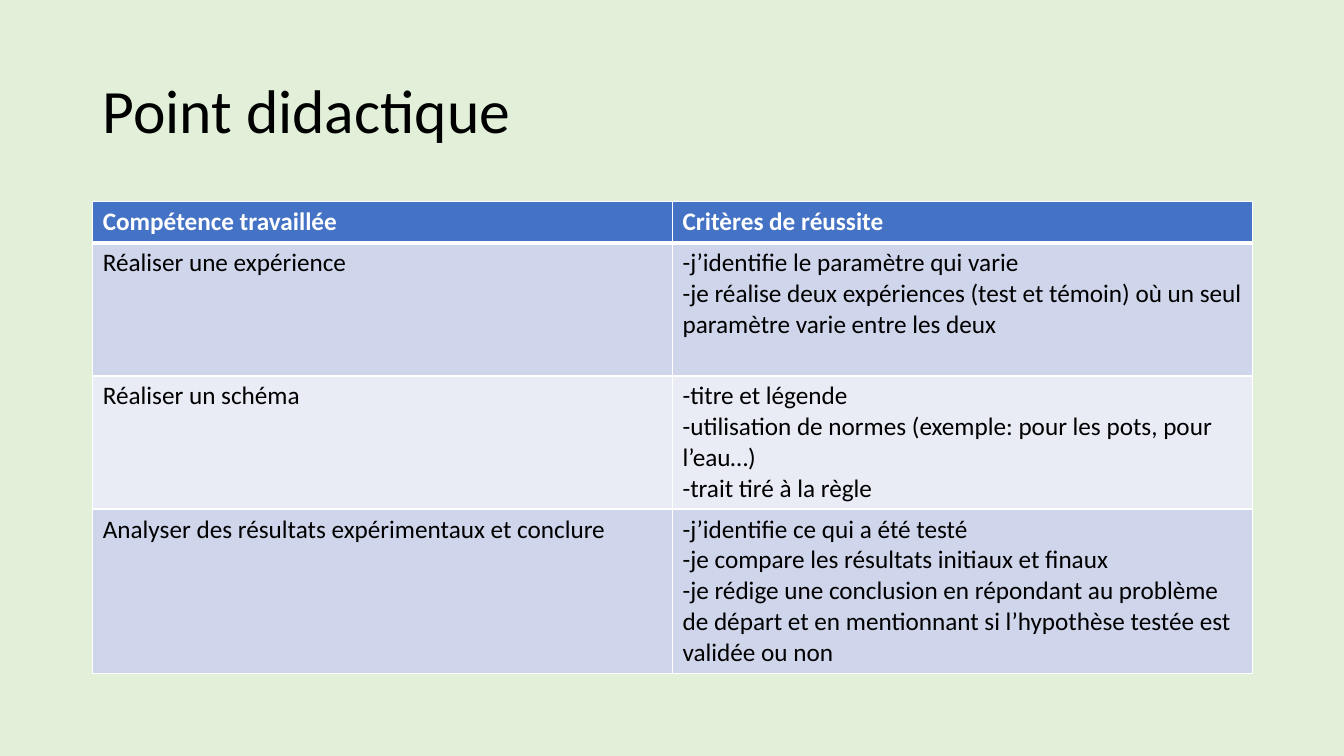
from lxml.etree import SubElement
from pptx import Presentation
from pptx.dml.color import RGBColor
from pptx.enum.text import MSO_ANCHOR
from pptx.oxml.ns import qn
from pptx.util import Inches, Pt

TITLE = "Point didactique"
HEAD = (["Compétence travaillée"], ["Critères de réussite"])
BODY = [
    (["Réaliser une expérience"],
     ["-j’identifie le paramètre qui varie",
      "-je réalise deux expériences (test et témoin) où un seul paramètre "
      "varie entre les deux"]),
    (["Réaliser un schéma"],
     ["-titre et légende",
      "-utilisation de normes (exemple: pour les pots, pour l’eau…)",
      "-trait tiré à la règle"]),
    (["Analyser des résultats expérimentaux et conclure"],
     ["-j’identifie ce qui a été testé",
      "-je compare les résultats initiaux et finaux",
      "-je rédige une conclusion en répondant au problème de départ et en "
      "mentionnant si l’hypothèse testée est validée ou non"]),
]
HEIGHTS = [0.41, 1.32, 1.32, 1.63]
LEFT, WIDTH = 0.92, 11.5
BLACK, WHITE, BLUE = "000000", "FFFFFF", "4472C4"
BANDS = ["CFD5EA", "E9EBF5"]


def color(code):
    return RGBColor.from_string(code)


def paint(fill, code):
    fill.solid()
    fill.fore_color.rgb = color(code)


def write(frame, lines, size, code, bold=False):
    for i, line in enumerate(lines):
        para = frame.add_paragraph() if i else frame.paragraphs[0]
        run = para.add_run()
        run.text = line
        font = run.font
        font.name, font.size, font.bold = "Calibri", Pt(size), bold
        font.color.rgb = color(code)


def border(cell, top, bottom):
    """Draw white cell edges; top and bottom widths are in points."""
    props = cell._tc.get_or_add_tcPr()
    edges = {"L": 1, "R": 1, "T": top, "B": bottom}
    for spot, (side, width) in enumerate(edges.items()):
        line = SubElement(props, qn(f"a:ln{side}"), w=str(Pt(width)))
        fill = SubElement(line, qn("a:solidFill"))
        SubElement(fill, qn("a:srgbClr"), val=WHITE)
        props.insert(spot, line)


def add_title(slide):
    box = slide.shapes.add_textbox(
        Inches(LEFT), Inches(0.4), Inches(WIDTH), Inches(1.45))
    frame = box.text_frame
    frame.word_wrap = True
    frame.vertical_anchor = MSO_ANCHOR.MIDDLE
    write(frame, [TITLE], 44, BLACK)
    frame.paragraphs[0].line_spacing = 0.9


def add_grid(slide):
    rows = [HEAD] + BODY
    grid = slide.shapes.add_table(
        len(rows), len(HEAD), Inches(LEFT), Inches(2),
        Inches(WIDTH), Inches(sum(HEIGHTS))).table
    for r, (row, height) in enumerate(zip(rows, HEIGHTS)):
        grid.rows[r].height = Inches(height)
        head = r == 0
        for c, lines in enumerate(row):
            cell = grid.cell(r, c)
            paint(cell.fill, BLUE if head else BANDS[(r - 1) % 2])
            border(cell, 3 if r == 1 else 1, 3 if head else 1)
            write(cell.text_frame, lines, 18, WHITE if head else BLACK, head)


def main():
    deck = Presentation()
    deck.slide_width, deck.slide_height = Inches(13.33), Inches(7.5)
    slide = deck.slides.add_slide(deck.slide_layouts[6])
    paint(slide.background.fill, "E2F0D9")
    add_title(slide)
    add_grid(slide)
    deck.save("out.pptx")


if __name__ == "__main__":
    main()
